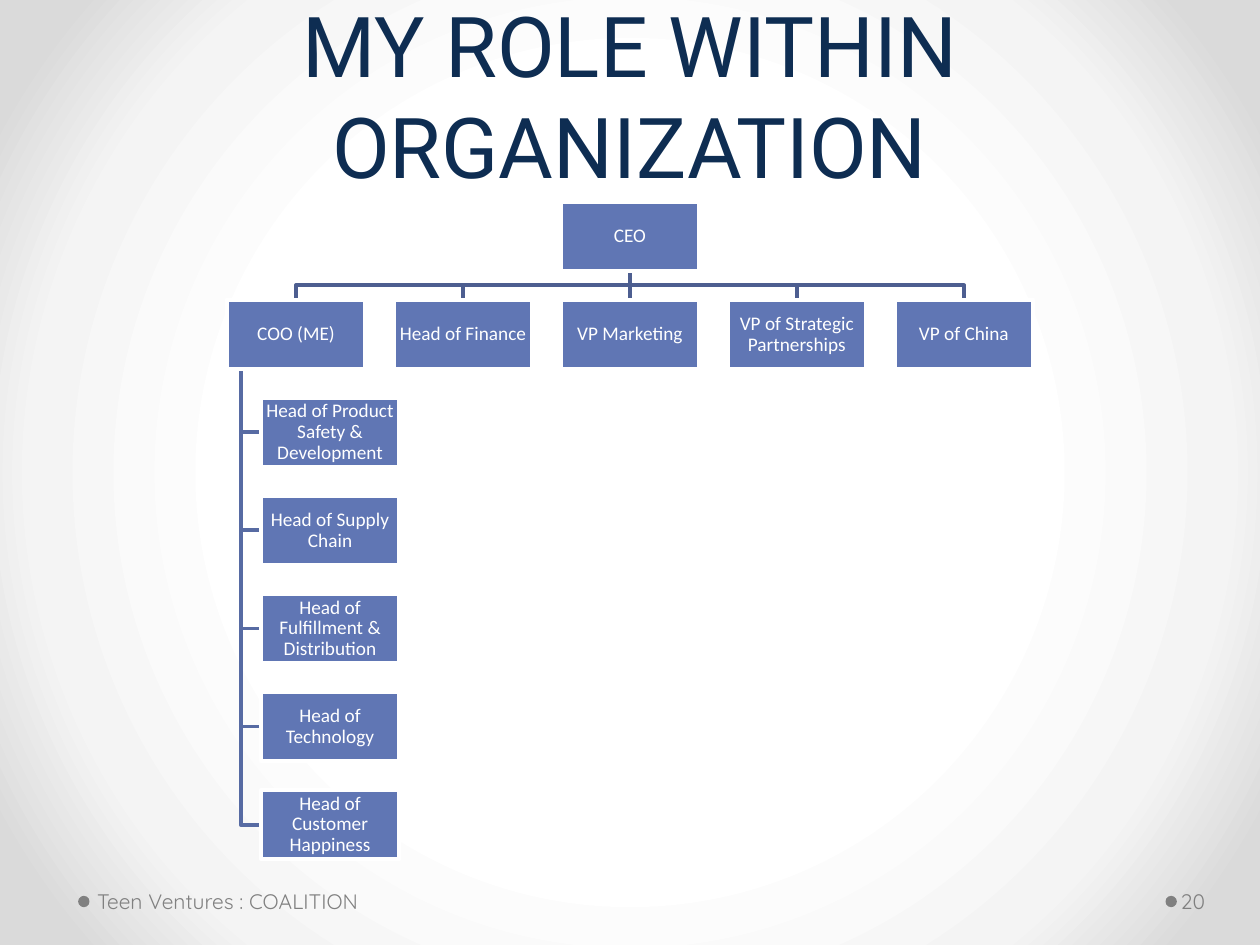
from dataclasses import dataclass

from pptx import Presentation
from pptx.dml.color import RGBColor
from pptx.enum.shapes import MSO_CONNECTOR, MSO_SHAPE
from pptx.enum.text import MSO_ANCHOR, PP_ALIGN
from pptx.oxml import parse_xml
from pptx.oxml.ns import nsdecls, qn
from pptx.util import Inches, Pt

NAVY = RGBColor(0x0E, 0x2D, 0x52)
BLUE = RGBColor(0x60, 0x76, 0xB4)
TOP_LINE = RGBColor(0x4D, 0x5E, 0x90)
SIDE_LINE = RGBColor(0x57, 0x6B, 0xA3)
GRAY = RGBColor(0x80, 0x80, 0x80)
WHITE = RGBColor(0xFF, 0xFF, 0xFF)
BACKGROUND_STOPS = [(50, "FFFFFF"), (76, "F4F4F4"), (92, "DADADA")]

# Chart grid, in inches
BOX_W, BOX_H = 1.1, 0.55
LEFT, TOP = 1.8, 1.6
COL_STEP = (7.1 - LEFT) / 4
ROW_STEP = (6.27 - TOP) / 6
INDENT = 0.27
TRUNK_X = LEFT + 0.11

DIRECT_REPORTS = ["COO (ME)", "Head of Finance", "VP Marketing",
                  "VP of Strategic Partnerships", "VP of China"]
COO_TEAM = ["Head of Product Safety & Development", "Head of Supply Chain",
            "Head of Fulfillment & Distribution", "Head of Technology",
            "Head of Customer Happiness"]


@dataclass
class Box:
    text: str
    x: float
    y: float

    @property
    def center_x(self) -> float:
        return self.x + BOX_W / 2

    @property
    def center_y(self) -> float:
        return self.y + BOX_H / 2

    @property
    def bottom(self) -> float:
        return self.y + BOX_H


@dataclass
class Label:
    text: str
    x: float
    y: float
    w: float
    h: float
    size: int
    font: str
    color: RGBColor
    insets: tuple[float, float, float, float]
    anchor: MSO_ANCHOR = MSO_ANCHOR.MIDDLE
    align: PP_ALIGN = PP_ALIGN.LEFT
    spacing: object = None


def write_text(sp, label: Label) -> None:
    tf = sp.text_frame
    tf.word_wrap = True
    tf.vertical_anchor = label.anchor
    (tf.margin_left, tf.margin_top,
     tf.margin_right, tf.margin_bottom) = map(Inches, label.insets)
    p = tf.paragraphs[0]
    p.alignment = label.align
    p.line_spacing = label.spacing
    r = p.add_run()
    r.text = label.text
    r.font.size = Pt(label.size)
    r.font.name = label.font
    r.font.color.rgb = label.color


def add_label(s, label: Label) -> None:
    sp = s.shapes.add_textbox(*map(Inches, (label.x, label.y, label.w, label.h)))
    write_text(sp, label)


def add_box(s, box: Box) -> None:
    sp = s.shapes.add_shape(MSO_SHAPE.RECTANGLE,
                            *map(Inches, (box.x, box.y, BOX_W, BOX_H)))
    sp.shadow.inherit = False
    sp.fill.solid()
    sp.fill.fore_color.rgb = BLUE
    sp.line.color.rgb = WHITE
    sp.line.width = Pt(2.25)
    write_text(sp, Label(box.text, box.x, box.y, BOX_W, BOX_H, 11, "Calibri", WHITE,
                         (0.01,) * 4, align=PP_ALIGN.CENTER, spacing=0.9))


def add_link(s, points: list[tuple[float, float]], color: RGBColor) -> None:
    emu = [(Inches(x), Inches(y)) for x, y in points]
    if len(emu) == 2:
        sp = s.shapes.add_connector(MSO_CONNECTOR.STRAIGHT, *emu[0], *emu[1])
        sp._element.spPr.append(sp._element.makeelement(qn("a:effectLst"), {}))
    else:
        builder = s.shapes.build_freeform(*emu[0])
        builder.add_line_segments(emu[1:], close=False)
        sp = builder.convert_to_shape()
        sp.shadow.inherit = False
        sp.fill.background()
    sp.line.color.rgb = color
    sp.line.width = Pt(2.25)


def add_dot(s, x: float) -> None:
    sp = s.shapes.add_shape(MSO_SHAPE.OVAL, *map(Inches, (x, 7.11, 0.09, 0.09)))
    sp.shadow.inherit = False
    sp.fill.solid()
    sp.fill.fore_color.rgb = GRAY
    sp.line.fill.background()


def set_background(s) -> None:
    stops = "".join(f'<a:gs pos="{pos * 1000}"><a:srgbClr val="{color}"/></a:gs>'
                    for pos, color in BACKGROUND_STOPS)
    s._element.cSld.insert(0, parse_xml(
        f'<p:bg {nsdecls("p", "a")}><p:bgPr><a:gradFill rotWithShape="1">'
        f'<a:gsLst>{stops}</a:gsLst><a:path path="circle">'
        '<a:fillToRect l="50000" t="50000" r="50000" b="50000"/></a:path>'
        '</a:gradFill><a:effectLst/></p:bgPr></p:bg>'))


def add_org_chart(s) -> None:
    ceo = Box("CEO", LEFT + 2 * COL_STEP, TOP)
    reports = [Box(text, LEFT + i * COL_STEP, TOP + ROW_STEP)
               for i, text in enumerate(DIRECT_REPORTS)]
    team = [Box(text, LEFT + INDENT, TOP + (i + 2) * ROW_STEP)
            for i, text in enumerate(COO_TEAM)]

    # Links from the CEO to the direct reports
    start = (ceo.center_x, ceo.bottom)
    bend_y = (ceo.bottom + reports[0].y) / 2
    for i, box in enumerate(reports):
        end = (box.center_x, box.y)
        bends = [] if i == 2 else [(ceo.center_x, bend_y), (box.center_x, bend_y)]
        add_link(s, [start, *bends, end], TOP_LINE)

    # Links from the COO to the team
    for box in team:
        add_link(s, [(TRUNK_X, reports[0].bottom), (TRUNK_X, box.center_y),
                     (box.x, box.center_y)], SIDE_LINE)

    for box in [ceo, *reports, *team]:
        add_box(s, box)


def main() -> None:
    prs = Presentation()
    prs.slide_width, prs.slide_height = Inches(10), Inches(7.5)
    s = prs.slides.add_slide(prs.slide_layouts[6])
    set_background(s)

    # Title
    add_label(s, Label("MY ROLE WITHIN ORGANIZATION", 0.5, 0.15, 9, 1.45, 48, "Roboto",
                       NAVY, (0.1, 0.05, 0.1, 0.05), MSO_ANCHOR.BOTTOM,
                       PP_ALIGN.CENTER, Pt(58)))

    # Footer
    for x in (9.25, 0.62):
        add_dot(s, x)
    add_label(s, Label("Teen Ventures : COALITION", 0.72, 6.95, 3.11, 0.4, 12,
                       "Quicksand", GRAY, (0.05, 0.05, 0.1, 0.05)))
    add_label(s, Label("20", 9.34, 6.95, 0.61, 0.4, 12,
                       "Quicksand", GRAY, (0.03, 0.05, 0.05, 0.05)))

    add_org_chart(s)
    prs.save("out.pptx")


if __name__ == "__main__":
    main()
